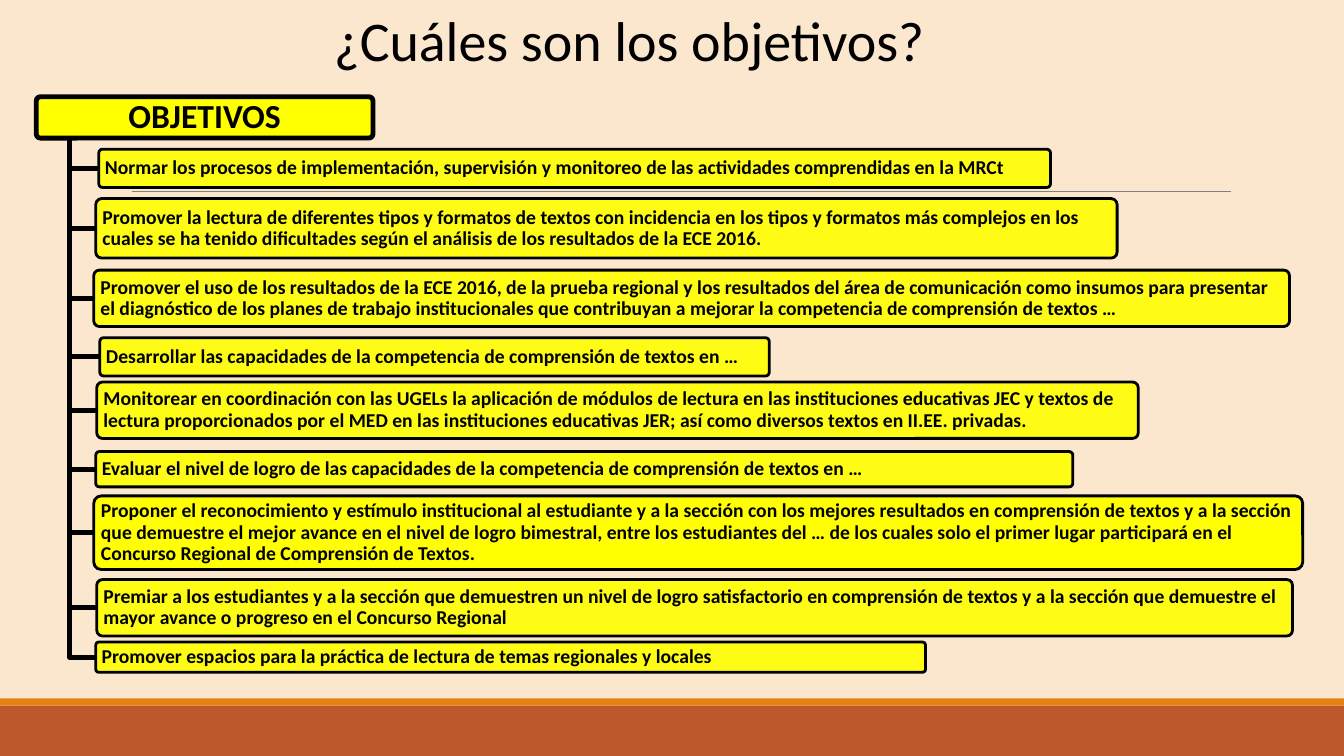
from dataclasses import dataclass

from lxml.etree import SubElement
from pptx import Presentation
from pptx.dml.color import RGBColor
from pptx.enum.shapes import MSO_CONNECTOR, MSO_SHAPE
from pptx.enum.text import MSO_ANCHOR, MSO_AUTO_SIZE, PP_ALIGN
from pptx.oxml.ns import qn
from pptx.util import Inches, Pt


@dataclass(frozen=True)
class Theme:
    """Colours, font, type sizes and line widths."""
    font: str = "Calibri"
    paper: str = "FBE6CE"
    band: str = "BD582C"
    stripe: str = "E48312"
    rule: str = "808080"
    box: str = "FFFF00"
    ink: str = "000000"
    title_size: int = 40
    header_size: int = 24
    body_size: int = 14
    heavy: float = 3.5
    medium: float = 2
    hairline: float = 0.5


THEME = Theme()
CELL = Inches(0.1)
COLS, ROWS = 133.3, 75
TRUNK = 6.9
HEADER = (3.6, 9.6, 33.4, 4.1)
OBJECTIVES = [
    ((9.8, 14.8, 94.4, 3.8), 90, "Normar los procesos de implementación, supervisión y monitoreo de las actividades comprendidas en la MRCt"),
    ((9.5, 19.7, 101.3, 5.9), 90, "Promover la lectura de diferentes tipos y formatos de textos con incidencia en los tipos y formatos más complejos en los cuales se ha tenido dificultades según el análisis de los resultados de la ECE 2016."),
    ((9.3, 26.8, 118.6, 5.6), 90, "Promover el uso de los resultados de la ECE 2016, de la prueba regional y los resultados del área de comunicación como insumos para presentar el diagnóstico de los planes de trabajo institucionales que contribuyan a mejorar la competencia de comprensión de textos …"),
    ((9.9, 33.5, 66.4, 3.8), 90, "Desarrollar las capacidades de la competencia de comprensión de textos en …"),
    ((9.6, 37.9, 103.3, 5.6), 90, "Monitorear en coordinación con las UGELs la aplicación de módulos de lectura en las instituciones educativas JEC y textos de lectura proporcionados por el MED en las instituciones educativas JER; así como diversos textos en II.EE. privadas."),
    ((9.5, 44.8, 96.9, 3.5), 90, "Evaluar el nivel de logro de las capacidades de la competencia de comprensión de textos en …"),
    ((9.3, 49.2, 119.9, 7.3), 100, "Proponer el reconocimiento y estímulo institucional al estudiante y a la sección con los mejores resultados en comprensión de textos y a la sección que demuestre el mejor avance en el nivel de logro bimestral, entre los estudiantes del … de los cuales solo el primer lugar participará en el Concurso Regional de Comprensión de Textos."),
    ((9.6, 57.5, 118.6, 5.6), 90, "Premiar a los estudiantes y a la sección que demuestren un nivel de logro satisfactorio en comprensión de textos y a la sección que demuestre el mayor avance o progreso en el Concurso Regional"),
    ((9.5, 63.7, 82.3, 3), 90, "Promover espacios para la práctica de lectura de temas regionales y locales"),
]


def grid(*cells):
    """Turn grid cells into slide lengths."""
    return [round(c * CELL) for c in cells]


def set_line(line, color, width):
    """Format an outline."""
    line.color.rgb = RGBColor.from_string(color)
    line.width = Pt(width)


def set_fill(sp, color, opacity=100):
    """Fill a shape, partly transparent if asked."""
    sp.fill.solid()
    sp.fill.fore_color.rgb = RGBColor.from_string(color)
    if opacity < 100:
        clr = sp.fill._xPr.find(qn("a:solidFill"))[0]
        SubElement(clr, qn("a:alpha")).set("val", str(opacity * 1000))


def write(tf, text, size, align, bold=False):
    """Write one formatted run into a text frame."""
    p = tf.paragraphs[0]
    p.alignment = align
    r = p.add_run()
    r.text = text
    r.font.name = THEME.font
    r.font.size = Pt(size)
    r.font.bold = bold
    r.font.color.rgb = RGBColor.from_string(THEME.ink)
    return p


def add_band(s, top, height, color):
    """Add a full-width strip."""
    sp = s.shapes.add_shape(MSO_SHAPE.RECTANGLE, *grid(0, top, COLS, height))
    sp.shadow.inherit = False
    set_fill(sp, color)
    sp.line.fill.background()


def add_rule(s, left, right, y):
    """Add a thin horizontal line."""
    ln = s.shapes.add_connector(MSO_CONNECTOR.STRAIGHT, *grid(left, y, right, y))
    set_line(ln.line, THEME.rule, THEME.hairline)
    SubElement(ln._element.spPr, qn("a:effectLst"))


def add_title(s, text):
    """Place and fill the title placeholder."""
    sp = s.shapes.title
    sp.left, sp.top, sp.width, sp.height = grid(31.8, 0, 61.2, 7.7)
    tf = sp.text_frame
    tf.auto_size = MSO_AUTO_SIZE.NONE
    tf.word_wrap = False
    tf.vertical_anchor = MSO_ANCHOR.MIDDLE
    write(tf, text, THEME.title_size, PP_ALIGN.CENTER)


def add_box(s, place, text, size, width, align=PP_ALIGN.LEFT, opacity=100):
    """Add a rounded yellow box with bold text."""
    sp = s.shapes.add_shape(MSO_SHAPE.ROUNDED_RECTANGLE, *grid(*place))
    sp.adjustments[0] = 0.1
    sp.shadow.inherit = False
    set_fill(sp, THEME.box, opacity)
    set_line(sp.line, THEME.ink, width)
    tf = sp.text_frame
    tf.word_wrap = True
    tf.vertical_anchor = MSO_ANCHOR.MIDDLE
    tf.margin_left = tf.margin_right = Inches(0.05)
    tf.margin_top = tf.margin_bottom = Inches(0.04)
    write(tf, text, size, align, bold=True).line_spacing = 0.9


def add_branch(s, place):
    """Add the elbow from the header down to a box."""
    left, top, _, height = place
    y = top + height / 2
    start, *bends = [tuple(grid(*pt)) for pt in
                     ((TRUNK, HEADER[1] + HEADER[3]), (TRUNK, y), (left, y))]
    fb = s.shapes.build_freeform(*start)
    fb.add_line_segments(bends, close=False)
    sp = fb.convert_to_shape()
    sp.shadow.inherit = False
    sp.fill.background()
    set_line(sp.line, THEME.ink, THEME.heavy)


def main():
    """Build and save the slide."""
    prs = Presentation()
    prs.slide_width, prs.slide_height = grid(COLS, ROWS)
    s = prs.slides.add_slide(prs.slide_layouts[5])
    set_fill(s.background, THEME.paper)
    add_band(s, 70, 5, THEME.band)
    add_band(s, 69.3, 0.7, THEME.stripe)
    add_rule(s, 13.1, 122.1, 19)
    add_title(s, "¿Cuáles son los objetivos?")
    add_box(s, HEADER, "OBJETIVOS", THEME.header_size, THEME.heavy, PP_ALIGN.CENTER)
    for place, opacity, text in OBJECTIVES:
        add_branch(s, place)
        add_box(s, place, text, THEME.body_size, THEME.medium, opacity=opacity)
    prs.save("out.pptx")


if __name__ == "__main__":
    main()
